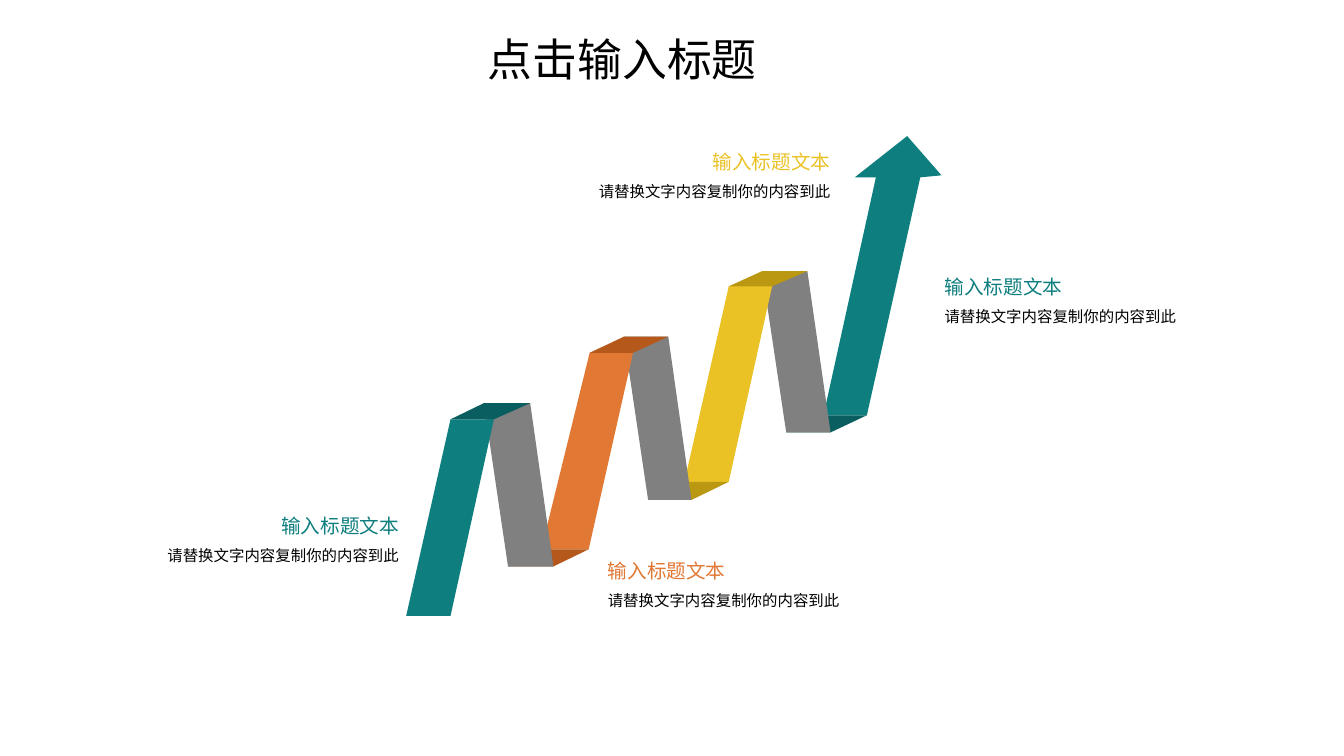
from pptx import Presentation
from pptx.dml.color import RGBColor
from pptx.enum.text import MSO_ANCHOR as Anchor, MSO_AUTO_SIZE as Fit, PP_ALIGN as Align
from pptx.util import Inches, Pt
from lxml.etree import SubElement
from pptx.oxml.ns import qn

TEAL = RGBColor(0x0E, 0x7E, 0x7F)
DEEP_TEAL = RGBColor(0x0B, 0x5E, 0x5F)
ORANGE = RGBColor(0xE1, 0x78, 0x33)
RUST = RGBColor(0xB4, 0x58, 0x1B)
YELLOW = RGBColor(0xEB, 0xC2, 0x26)
OLIVE = RGBColor(0xBB, 0x98, 0x11)
GRAY = RGBColor(0x80, 0x80, 0x80)
BLACK = RGBColor(0, 0, 0)

# Content
TITLE = "点击输入标题"
HEAD = "输入标题文本"
BODY = "请替换文字内容复制你的内容到此"

# Labels: left, top, heading colour, alignment
LABELS = [
    (0.87, 5.04, TEAL, Align.RIGHT),
    (6.03, 5.49, ORANGE, Align.LEFT),
    (5.15, 1.43, YELLOW, Align.RIGHT),
    (9.37, 2.67, TEAL, Align.LEFT),
]
LABEL_W, HEAD_H, BODY_H = 3.09, 0.34, 0.63

# Ribbon edges, each (left x, right x, y), from the lower left upwards
START = (4.03, 4.47, 6.11)
PEAKS = [  # front edge, back edge
    ((4.47, 4.90, 4.16), (4.80, 5.26, 4.00)),
    ((5.85, 6.28, 3.50), (6.19, 6.63, 3.34)),
    ((7.23, 7.66, 2.84), (7.56, 8.01, 2.69)),
]
DIPS = [  # back edge, front edge
    ((5.04, 5.49, 5.62), (5.37, 5.84, 5.45)),
    ((6.43, 6.86, 4.96), (6.79, 7.23, 4.78)),
    ((7.80, 8.24, 4.29), (8.17, 8.60, 4.12)),
]
ARROW = [(8.17, 4.12), (8.69, 1.76), (8.48, 1.76), (9.00, 1.35),
         (9.34, 1.74), (9.13, 1.76), (8.60, 4.12)]
RISE = [TEAL, ORANGE, YELLOW]
TOP_FOLD = [DEEP_TEAL, RUST, OLIVE]
LOW_FOLD = [RUST, OLIVE, DEEP_TEAL]

deck = Presentation()
deck.slide_width, deck.slide_height = Inches(13.333), Inches(7.5)
slide = deck.slides.add_slide(deck.slide_layouts[5])


def write(text, box=None, shape=None, size=11, color=BLACK, font="Arial",
          align=Align.LEFT, anchor=Anchor.TOP, space=1.0, inset=(0, 0)):
    if shape is None:
        shape = slide.shapes.add_textbox(0, 0, 0, 0)
    shape.left, shape.top, shape.width, shape.height = map(Inches, box)
    frame = shape.text_frame
    frame.auto_size = Fit.NONE
    frame.word_wrap = True
    frame.vertical_anchor = anchor
    frame.margin_left = frame.margin_right = Inches(inset[0])
    frame.margin_top = frame.margin_bottom = Inches(inset[1])
    para = frame.paragraphs[0]
    para.alignment, para.line_spacing = align, space
    run = para.add_run()
    run.text = text
    run.font.size, run.font.name = Pt(size), font
    run.font.color.rgb = color
    SubElement(run.font._element, qn("a:ea")).set("typeface", font)


def face(points, color):
    first, *rest = [(Inches(x), Inches(y)) for x, y in points]
    maker = slide.shapes.build_freeform(*first)
    maker.add_line_segments(rest, close=True)
    shape = maker.convert_to_shape()
    shape.shadow.inherit = False
    shape.fill.solid()
    shape.fill.fore_color.rgb = color
    shape.line.fill.background()


def band(one, two, color):
    """Fill the strip between two level edges."""
    (a, b, y), (c, d, z) = one, two
    face([(a, y), (b, y), (d, z), (c, z)], color)


# Title
write(TITLE, box=(4.74, 0.26, 2.96, 0.64), shape=slide.shapes.title,
      size=32, font="Noto Sans CJK SC", inset=(0.1, 0.05))

# Zigzag ribbon, drawn from the arrow back to the start
face(ARROW, TEAL)
feet = [START] + [front for back, front in DIPS]
for i in reversed(range(len(PEAKS))):
    (front, crest), (floor, near) = PEAKS[i], DIPS[i]
    band(near, floor, LOW_FOLD[i])
    band(crest, floor, GRAY)
    band(feet[i], front, RISE[i])
    band(front, crest, TOP_FOLD[i])

# Labels
for left, top, color, align in LABELS:
    write(HEAD, box=(left, top, LABEL_W, HEAD_H), size=14, color=color,
          align=align, anchor=Anchor.MIDDLE)
    write(BODY, box=(left, top + HEAD_H, LABEL_W, BODY_H), align=align, space=1.2)

deck.save("out.pptx")
